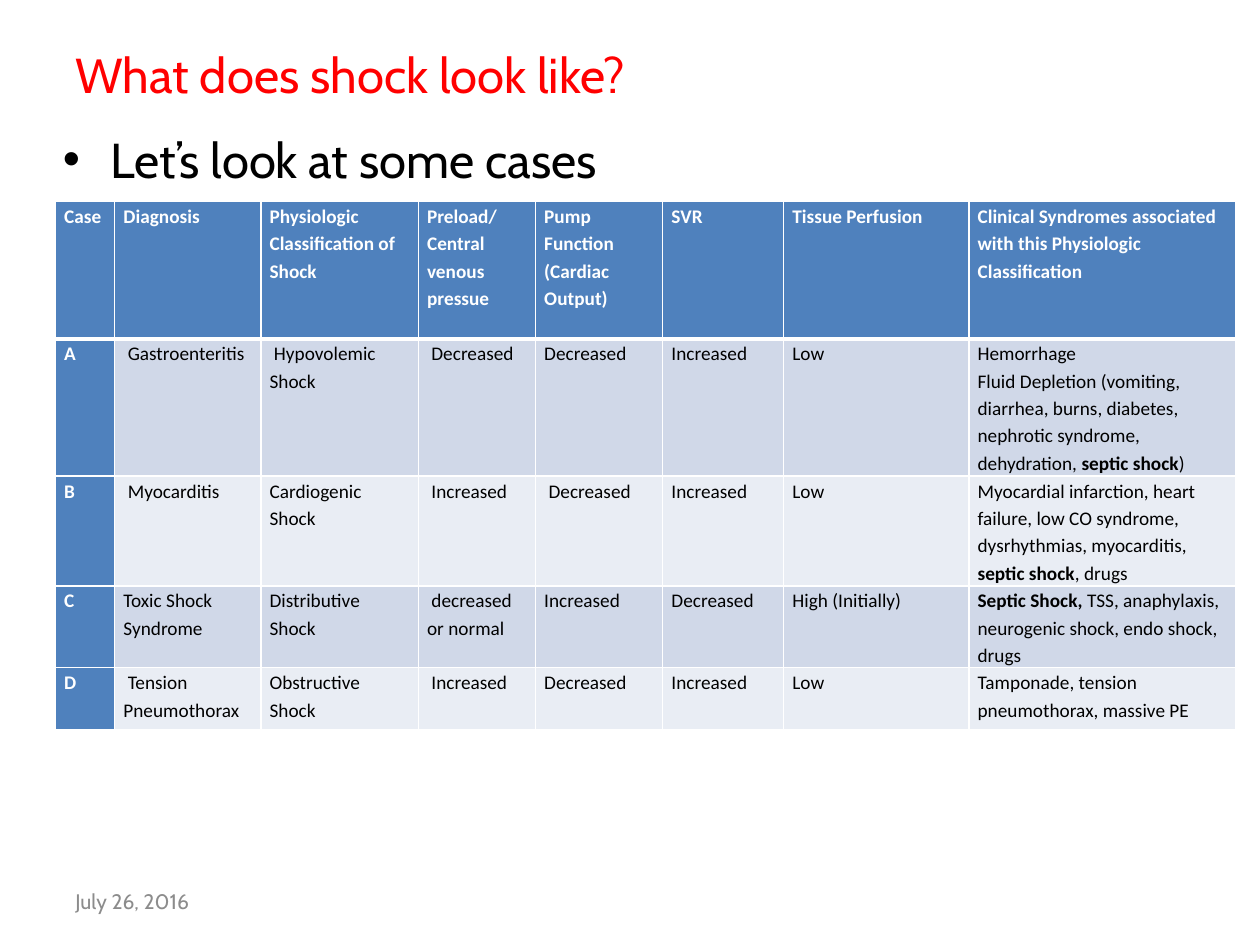
import pptx
import pptx.dml.color
import pptx.enum.text
import pptx.oxml.ns
import pptx.util
from lxml import etree
from pptx.util import Inches

BLUE, DARK_BAND, LIGHT_BAND = "4F81BD", "D0D8E8", "E9EDF4"
WHITE, BLACK, RED, GREY = "FFFFFF", "000000", "FF0000", "8C8C8C"

COLUMN_WIDTHS = [0.47, 1.16, 1.25, 0.93, 1.01, 0.96, 1.47, 2.12]
# Each row is tall enough for its longest cell
ROW_HEIGHTS = [1.09, 1.09, 0.87, 0.65, 0.49]

# Text between ** marks is bold; a line break starts a new paragraph
CASES = [
    ["Case", "Diagnosis", "Physiologic Classification of Shock",
     "Preload/Central venous pressue", "Pump Function (Cardiac Output)",
     "SVR", "Tissue Perfusion",
     "Clinical Syndromes associated with this Physiologic Classification"],
    ["A", " Gastroenteritis", " Hypovolemic Shock", " Decreased",
     "Decreased", "Increased", "Low",
     "Hemorrhage\nFluid Depletion (vomiting, diarrhea, burns, diabetes, "
     "nephrotic syndrome, dehydration, **septic shock**)"],
    ["B", " Myocarditis", "Cardiogenic Shock", " Increased",
     " Decreased", "Increased", "Low",
     "Myocardial infarction, heart failure, low CO syndrome, "
     "dysrhythmias, myocarditis, **septic shock**, drugs"],
    ["C", "Toxic Shock Syndrome", "Distributive Shock",
     " decreased or normal", "Increased", "Decreased", "High (Initially)",
     "**Septic Shock, **TSS, anaphylaxis, neurogenic shock, endo shock, drugs"],
    ["D", " Tension Pneumothorax", "Obstructive Shock", " Increased",
     "Decreased", "Increased", "Low",
     "Tamponade, tension pneumothorax, massive PE"],
]


def rgb(value):
    return pptx.dml.color.RGBColor.from_string(value)


def add_xml(parent, tag, **attributes):
    return etree.SubElement(parent, pptx.oxml.ns.qn(tag), attributes)


def write(frame, text, *, size, font, color, bold=False, spacing=None, bullet=None):
    for index, line in enumerate(text.split("\n")):
        paragraph = frame.paragraphs[0] if index == 0 else frame.add_paragraph()
        if spacing:
            paragraph.line_spacing = spacing
        if bullet:
            properties = paragraph._p.get_or_add_pPr()
            properties.set("marL", str(Inches(0.38)))
            properties.set("indent", str(-Inches(0.38)))
            add_xml(properties, "a:buFont", typeface="Arial")
            add_xml(properties, "a:buChar", char=bullet)
        for part, words in enumerate(line.split("**")):
            if words:
                run = paragraph.add_run()
                run.text = words
                run.font.size = pptx.util.Pt(size)
                run.font.name = font
                run.font.color.rgb = rgb(color)
                run.font.bold = bold or part % 2 == 1


class SlideBuilder:
    heading_font = "Cabin"
    table_font = "Calibri"

    def __init__(self, slide):
        self.slide = slide

    def text(self, text, left, top, width, height, *, size=28, color=BLACK,
             anchor=pptx.enum.text.MSO_ANCHOR.TOP, bullet=None):
        box = self.slide.shapes.add_textbox(
            Inches(left), Inches(top), Inches(width), Inches(height))
        box.text_frame.word_wrap = True
        box.text_frame.vertical_anchor = anchor
        write(box.text_frame, text, size=size, font=self.heading_font,
              color=color, bullet=bullet)

    def borders(self, cell, bottom):
        properties = cell._tc.get_or_add_tcPr()
        for side, points in (("L", 1), ("R", 1), ("T", 1), ("B", bottom)):
            line = add_xml(properties, f"a:ln{side}", w=str(pptx.util.Pt(points)))
            add_xml(add_xml(line, "a:solidFill"), "a:srgbClr", val=WHITE)

    def table(self, rows, left, top, widths, heights):
        table = self.slide.shapes.add_table(
            len(rows), len(widths), Inches(left), Inches(top),
            Inches(sum(widths)), Inches(sum(heights))).table
        table.first_col = True
        for column, width in zip(table.columns, widths):
            column.width = Inches(width)
        for row, height in zip(table.rows, heights):
            row.height = Inches(height)

        for r, row in enumerate(rows):
            for c, text in enumerate(row):
                cell = table.cell(r, c)
                heading = r == 0 or c == 0
                band = DARK_BAND if r % 2 else LIGHT_BAND
                cell.margin_left = cell.margin_right = Inches(0.07)
                cell.margin_top = cell.margin_bottom = 0
                self.borders(cell, bottom=3 if r == 0 else 1)
                cell.fill.solid()
                cell.fill.fore_color.rgb = rgb(BLUE if heading else band)
                write(cell.text_frame, text, size=11, font=self.table_font,
                      color=WHITE if heading else BLACK, bold=heading, spacing=1.15)


def main():
    deck = pptx.Presentation()
    deck.slide_width, deck.slide_height = Inches(10), Inches(7.5)
    builder = SlideBuilder(deck.slides.add_slide(deck.slide_layouts[6]))

    # Title and lead-in
    builder.text("What does shock look like?", 0.5, 0.3, 9, 1.25, color=RED)
    builder.text("Let’s look at some cases", 0.4, 0.98, 9, 0.93, bullet="•")

    # Date
    builder.text("July 26, 2016", 0.5, 6.95, 2.33, 0.4, size=12, color=GREY,
                 anchor=pptx.enum.text.MSO_ANCHOR.MIDDLE)

    # Case comparison
    builder.table(CASES, 0.44, 1.6, COLUMN_WIDTHS, ROW_HEIGHTS)

    deck.save("out.pptx")


if __name__ == "__main__":
    main()
